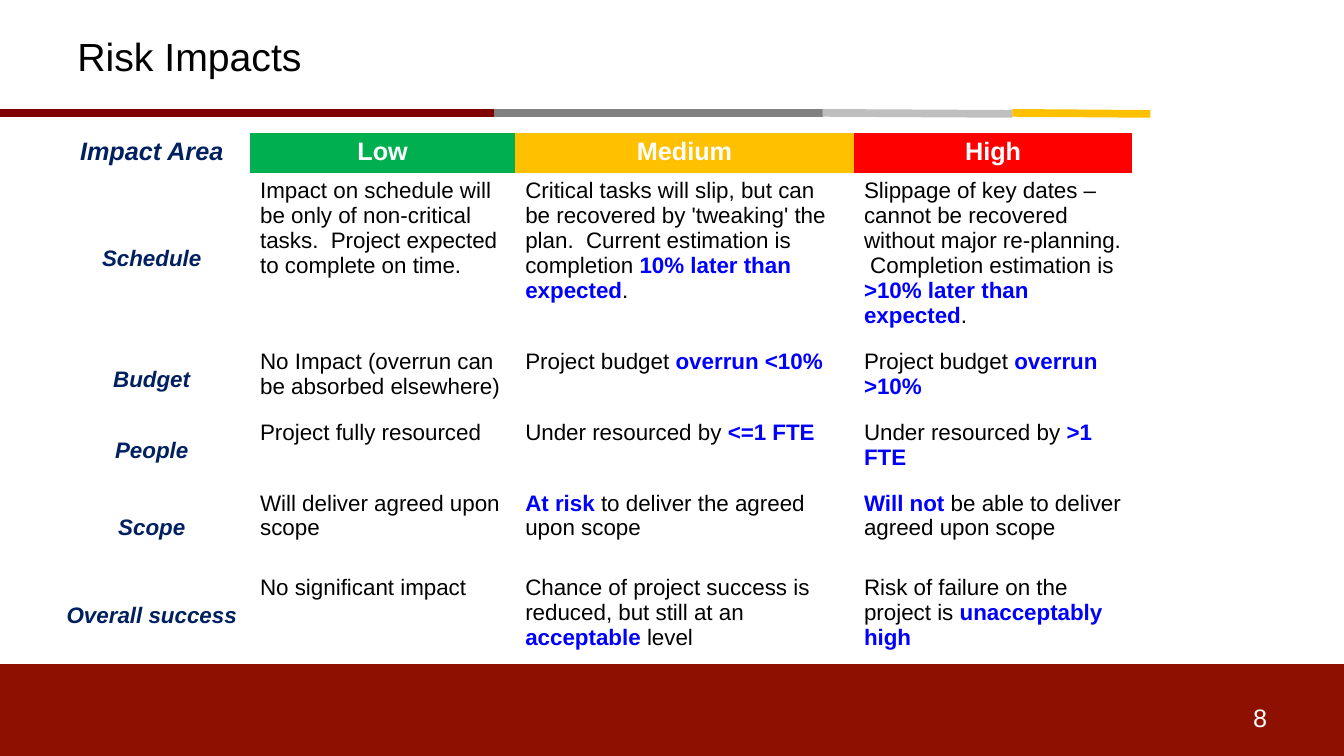
import pptx
import pptx.util
import pptx.dml.color
import pptx.enum.shapes
import pptx.enum.text
import pptx.oxml

Inches, Pt = pptx.util.Inches, pptx.util.Pt
PP_ALIGN = pptx.enum.text.PP_ALIGN
ANCHOR = pptx.enum.text.MSO_ANCHOR

COLORS = {
    "footer": "8E1000", "maroon": "800000", "gray": "808080", "silver": "BFBFBF",
    "amber": "FFC000", "green": "00B050", "red": "FF0000",
    "label": "002060", "key": "0000FF", "text": "000000", "white": "FFFFFF",
}
TITLE = "Risk Impacts"
PAGE_NUMBER = "8"
RULE = [  # start x, end x, end y, colour
    (0, 4.9, 1.12, "maroon"), (4.9, 8.16, 1.12, "gray"),
    (8.16, 10.04, 1.13, "silver"), (10.04, 11.41, 1.13, "amber"),
]
RULE_Y = 1.12
COL_WIDTHS = [1.95, 2.63, 3.36, 2.76]
ROW_HEIGHTS = [0.32, 1.43, 0.7, 0.7, 0.84, 0.9]
HEADERS = [("Impact Area", None), ("Low", "green"), ("Medium", "amber"), ("High", "red")]
# Text between asterisks is a key phrase.
IMPACTS = [
    ("Schedule",
     "Impact on schedule will be only of non-critical tasks.  Project expected to complete on time.",
     "Critical tasks will slip, but can be recovered by 'tweaking' the plan.  "
     "Current estimation is completion *10% later than expected*.",
     "Slippage of key dates – cannot be recovered without major re-planning.  "
     "Completion estimation is *>10% later than expected*."),
    ("Budget", "No Impact (overrun can be absorbed elsewhere)",
     "Project budget *overrun <10%*", "Project budget *overrun >10%*"),
    ("People", "Project fully resourced",
     "Under resourced by *<=1 FTE*", "Under resourced by *>1 FTE*"),
    ("Scope", "Will deliver agreed upon scope",
     "*At risk *to deliver the agreed upon scope",
     "*Will not *be able to deliver agreed upon scope"),
    ("Overall success", "No significant impact",
     "Chance of project success is reduced, but still at an *acceptable *level",
     "Risk of failure on the project is *unacceptably high*"),
]


def rgb(name):
    return pptx.dml.color.RGBColor.from_string(COLORS[name])


def style(font, size, color, bold=False, italic=False):
    font.name, font.size = "Arial", Pt(size)
    font.bold, font.italic = bold, italic
    font.color.rgb = rgb(color)


def add_text(slide, box, text, size, color):
    tf = slide.shapes.add_textbox(*map(Inches, box)).text_frame
    tf.word_wrap = True
    tf.vertical_anchor = ANCHOR.MIDDLE
    tf.text = text
    style(tf.paragraphs[0].font, size, color)


def add_rule(slide):
    for x1, x2, y2, color in RULE:
        line = slide.shapes.add_connector(
            pptx.enum.shapes.MSO_CONNECTOR.STRAIGHT,
            Inches(x1), Inches(RULE_Y), Inches(x2), Inches(y2))
        line.line.color.rgb = rgb(color)
        line.line.width = Pt(5.5)
        line._element.spPr.append(pptx.oxml.parse_xml(
            '<a:effectLst xmlns:a="http://schemas.openxmlformats.org/drawingml/2006/main"/>'))


def fill_heading(cell, text, size, color, italic):
    cell.text = text
    p = cell.text_frame.paragraphs[0]
    p.alignment = PP_ALIGN.CENTER
    style(p.font, size, color, bold=True, italic=italic)


def fill_impact(cell, text):
    """Write the text with its key phrases in bold blue."""
    p = cell.text_frame.paragraphs[0]
    style(p.font, 16, "text")
    for i, part in enumerate(text.split("*")):
        if part:
            r = p.add_run()
            r.text = part
            key = i % 2 == 1
            style(r.font, 16, "key" if key else "text", bold=key)


def add_impact_table(slide):
    table = slide.shapes.add_table(
        len(ROW_HEIGHTS), len(COL_WIDTHS), Inches(0.53), Inches(1.32),
        Inches(sum(COL_WIDTHS)), Inches(sum(ROW_HEIGHTS))).table
    table.first_row = table.horz_banding = False
    tbl_pr = table._tbl.tblPr
    # "No Style, No Grid"
    tbl_pr[0].text = "{2D5ABB26-0587-4C30-8999-92F81FD0307C}"
    for column, width in zip(table.columns, COL_WIDTHS):
        column.width = Inches(width)
    for row, height in zip(table.rows, ROW_HEIGHTS):
        row.height = Inches(height)
    for cell in table.iter_cells():
        cell.fill.background()
    for c, (text, fill) in enumerate(HEADERS):
        cell = table.cell(0, c)
        fill_heading(cell, text, 18, "white" if fill else "label", italic=not fill)
        if fill:
            cell.fill.solid()
            cell.fill.fore_color.rgb = rgb(fill)
    for r, (area, *impacts) in enumerate(IMPACTS, 1):
        label = table.cell(r, 0)
        label.vertical_anchor = ANCHOR.MIDDLE
        fill_heading(label, area, 16, "label", italic=True)
        for c, text in enumerate(impacts, 1):
            fill_impact(table.cell(r, c), text)


def main():
    prs = pptx.Presentation()
    prs.slide_width, prs.slide_height = Inches(13.33), Inches(7.5)
    slide = prs.slides.add_slide(prs.slide_layouts[6])

    footer = slide.shapes.add_shape(
        pptx.enum.shapes.MSO_SHAPE.RECTANGLE,
        Inches(0), Inches(6.59), Inches(13.35), Inches(0.96))
    footer.shadow.inherit = False
    footer.fill.solid()
    footer.fill.fore_color.rgb = rgb("footer")
    footer.line.fill.background()

    add_rule(slide)
    add_text(slide, (12.33, 6.92, 0.64, 0.4), PAGE_NUMBER, 18, "white")
    add_text(slide, (0.67, 0.04, 12, 1.03), TITLE, 28, "text")
    add_impact_table(slide)
    prs.save("out.pptx")


if __name__ == "__main__":
    main()
